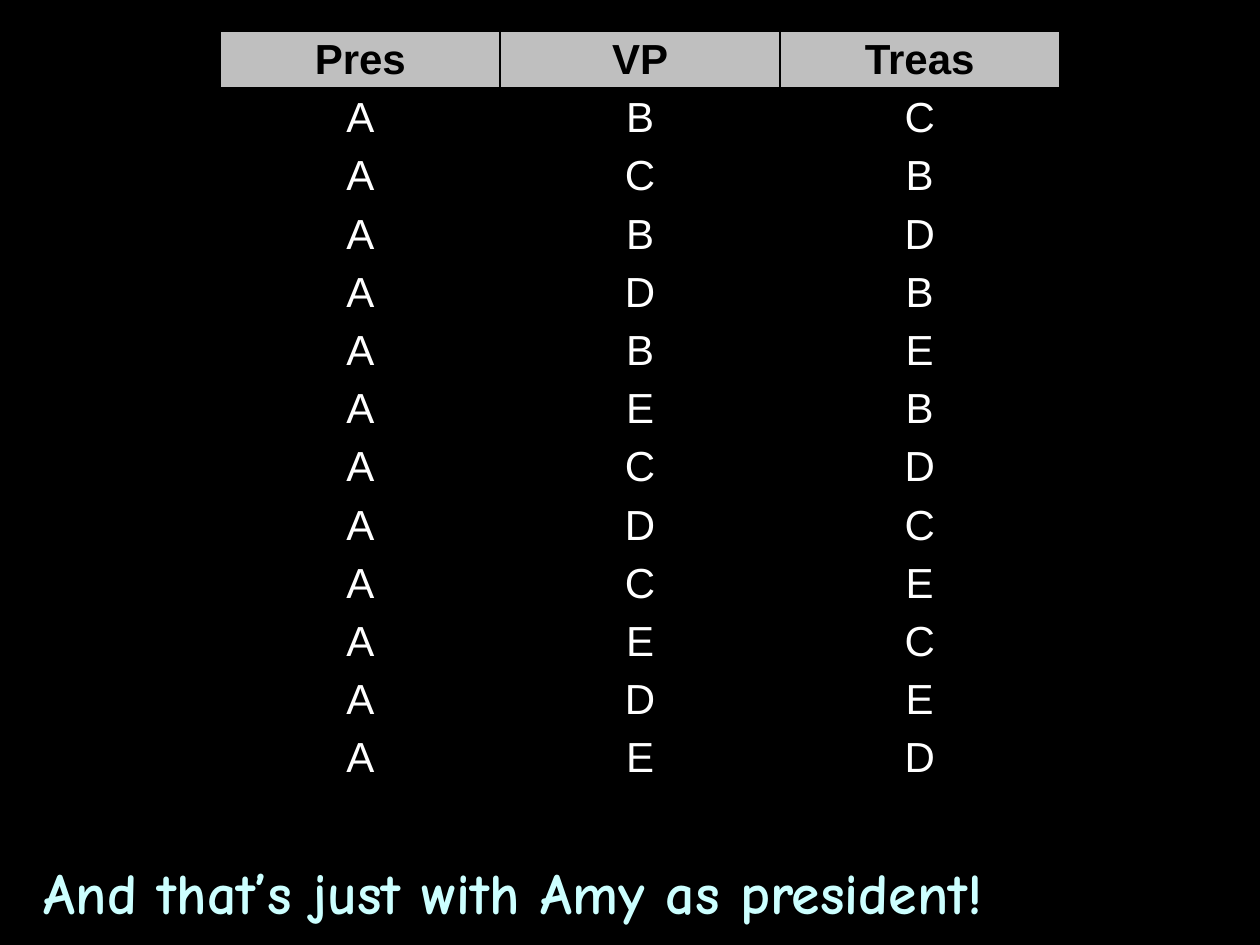
from lxml import etree
from pptx import Presentation
from pptx.dml.color import RGBColor
from pptx.enum import text
from pptx.oxml import ns
from pptx.util import Inches, Pt

HEADER = ("Pres", "VP", "Treas")
PAIRS = ("BC", "CB", "BD", "DB", "BE", "EB", "CD", "DC", "CE", "EC", "DE", "ED")
CAPTION = "And that’s just with Amy as president!"
COL_W, ROW_H = 2.22, 0.41
BLACK, WHITE, GREY, CYAN = "000000", "FFFFFF", "BFBFBF", "CCFFFF"


def paint(fill, color):
    fill.solid()
    fill.fore_color.rgb = RGBColor.from_string(color)


def style(p, font, size, color, bold):
    f = p.runs[0].font
    f.name, f.size, f.bold = font, Pt(size), bold
    f.color.rgb = RGBColor.from_string(color)


def add_borders(cell, bottom):
    pr = cell._tc.get_or_add_tcPr()
    for i, (side, width) in enumerate((("L", 1), ("R", 1), ("T", 1), ("B", bottom))):
        ln = etree.Element(ns.qn(f"a:ln{side}"), w=str(Pt(width)))
        fill = etree.SubElement(ln, ns.qn("a:solidFill"))
        etree.SubElement(fill, ns.qn("a:srgbClr"), val=BLACK)
        pr.insert(i, ln)


def add_officers(s):
    rows = [HEADER] + [("A", *pair) for pair in PAIRS]
    table = s.shapes.add_table(len(rows), len(HEADER), Inches(1.75), Inches(0.25),
                               Inches(COL_W * len(HEADER)), Inches(ROW_H * len(rows))).table
    for col in table.columns:
        col.width = Inches(COL_W)
    for i, row in enumerate(rows):
        table.rows[i].height = Inches(ROW_H)
        head = i == 0
        for j, value in enumerate(row):
            cell = table.cell(i, j)
            cell.margin_top, cell.margin_bottom = Inches(0.04), Inches(0.05)
            cell.vertical_anchor = text.MSO_ANCHOR.MIDDLE
            paint(cell.fill, GREY if head else BLACK)
            add_borders(cell, 3 if head else 1)
            p = cell.text_frame.paragraphs[0]
            p.text, p.alignment = value, text.PP_ALIGN.CENTER
            style(p, "Arial", 24, BLACK if head else WHITE, head)


def add_caption(s):
    tf = s.shapes.add_textbox(Inches(0.25), Inches(6.75), Inches(9), Inches(0.58)).text_frame
    tf.word_wrap = True
    p = tf.paragraphs[0]
    p.text, p.space_before = CAPTION, Pt(6.6)
    style(p, "Comic Neue", 33, CYAN, True)


def main():
    """Build the slide listing every officer line-up with A as president."""
    prs = Presentation()
    prs.slide_width, prs.slide_height = Inches(10), Inches(7.5)
    s = prs.slides.add_slide(prs.slide_layouts[6])
    paint(s.background.fill, BLACK)
    add_officers(s)
    add_caption(s)
    prs.save("out.pptx")


if __name__ == "__main__":
    main()
